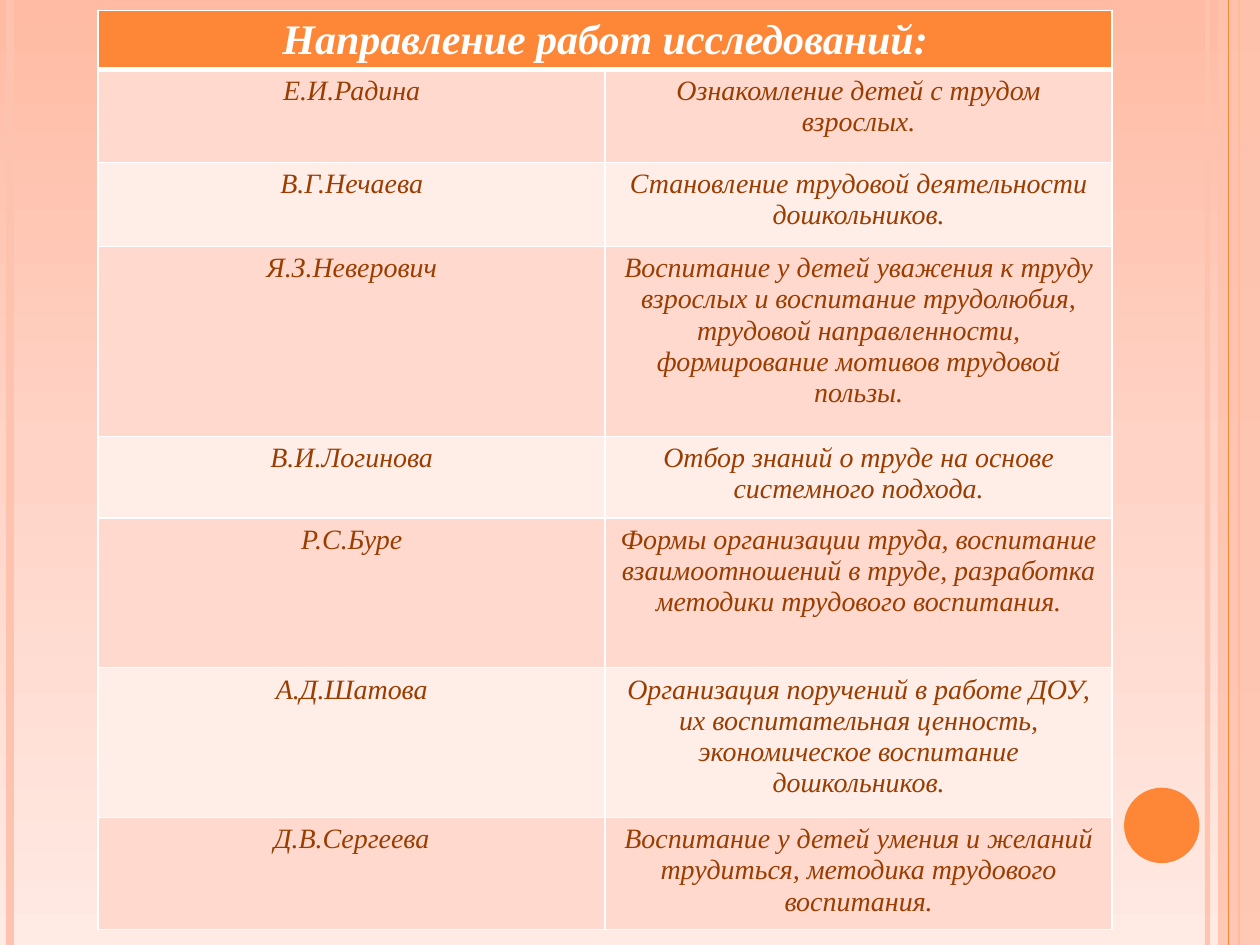
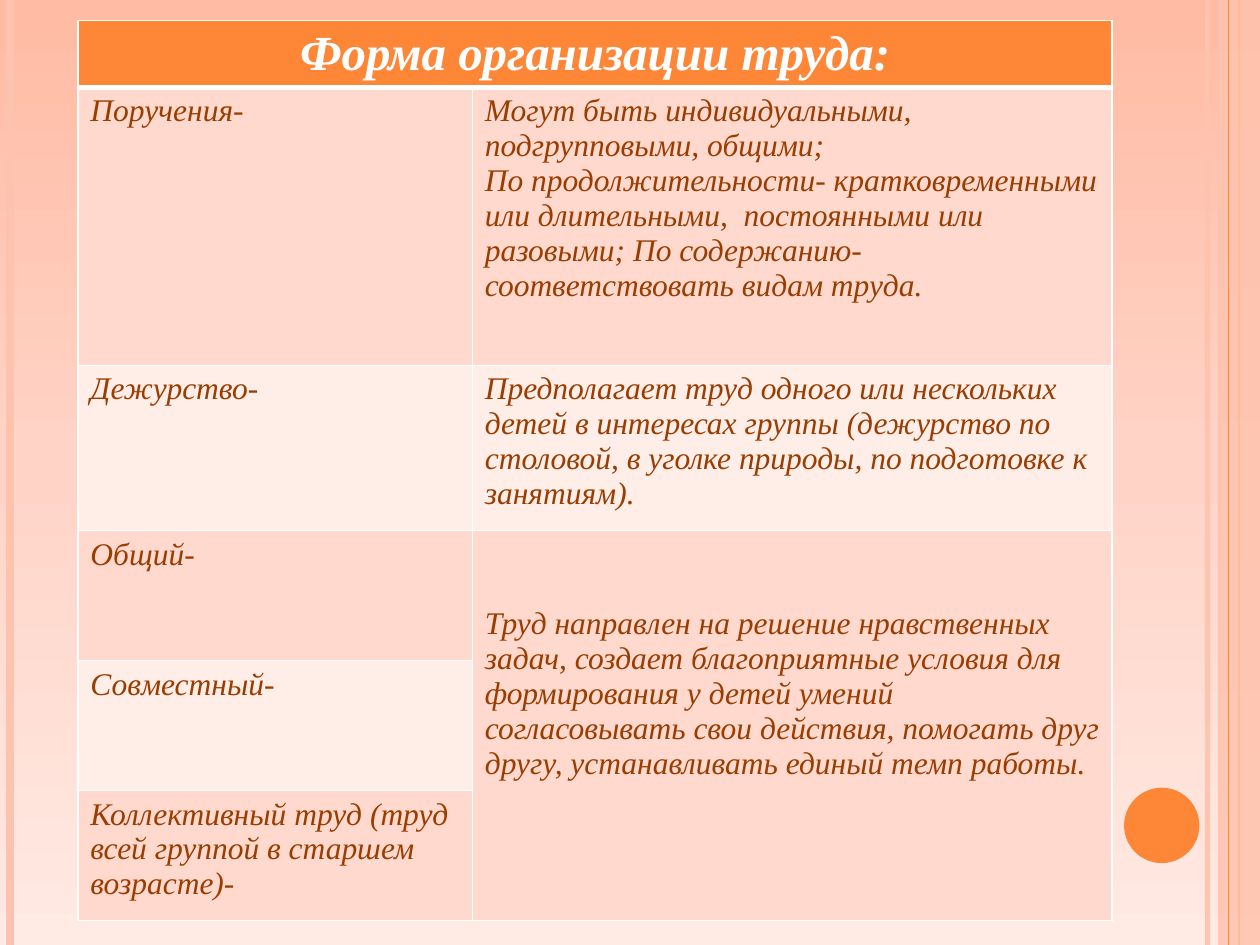
from pptx import Presentation
from pptx.dml.color import RGBColor
from pptx.enum.shapes import MSO_CONNECTOR, MSO_SHAPE
from pptx.enum.text import PP_ALIGN
from pptx.oxml.ns import qn
from pptx.util import Cm, Pt
from lxml import etree
from copy import deepcopy

LINE = MSO_CONNECTOR.STRAIGHT
RECT, OVAL = MSO_SHAPE.RECTANGLE, MSO_SHAPE.OVAL
LEFT, CENTER = PP_ALIGN.LEFT, PP_ALIGN.CENTER

COLORS = {
    "accent": "FE8637", "stripe": "FEC3AE", "text": "9A3D01", "white": "FFFFFF",
    "band": "FFD9CE", "pale": "FFEDE8",
    "sky_top": "FFBBA3", "sky_mid": "FFD4C7", "sky_low": "FFEAE4",
}
PAGE = (0, 0, 25.4, 19.05)
BASE_FONT = {"name": "Times New Roman", "italic": True}
HEAD_FONT = {**BASE_FONT, "bold": True}
BODY_FONT = {**BASE_FONT, "bold": False}

RESEARCH = [
    ("Е.И.Радина", "Ознакомление детей с трудом взрослых."),
    ("В.Г.Нечаева", "Становление трудовой деятельности дошкольников."),
    ("Я.З.Неверович", "Воспитание у детей уважения к труду взрослых и воспитание "
     "трудолюбия, трудовой направленности, формирование мотивов трудовой пользы."),
    ("В.И.Логинова", "Отбор знаний о труде на основе системного подхода."),
    ("Р.С.Буре", "Формы организации труда, воспитание взаимоотношений в труде, "
     "разработка методики трудового воспитания."),
    ("А.Д.Шатова", "Организация поручений в работе ДОУ, их воспитательная ценность, "
     "экономическое воспитание дошкольников."),
    ("Д.В.Сергеева", "Воспитание у детей умения и желаний трудиться, методика "
     "трудового воспитания."),
]
FORMS = [
    ("Поручения-", "Могут быть индивидуальными, подгрупповыми, общими;\n"
     "По продолжительности- кратковременными или длительными,  постоянными или "
     "разовыми; По содержанию- соответствовать видам труда."),
    ("Дежурство-", "Предполагает труд одного или нескольких детей в интересах группы "
     "(дежурство по столовой, в уголке природы, по подготовке к занятиям)."),
    ("Общий-", "Труд направлен на решение нравственных задач, создает благоприятные "
     "условия для формирования у детей умений согласовывать свои действия, помогать "
     "друг другу, устанавливать единый темп работы."),
    ("Совместный-", ""),
    ("Коллективный труд (труд всей группой в старшем возрасте)-", ""),
]


def rgb(name):
    """Return the named palette colour."""
    return RGBColor.from_string(COLORS[name])


def set_alpha(sp, percent):
    """Make the first colour of a shape or connector partly transparent."""
    clr = next(sp._element.spPr.iter(qn("a:srgbClr")))
    etree.SubElement(clr, qn("a:alpha"), val=str(percent * 1000))


def set_background(master):
    """Give the master a gradient running from top to bottom."""
    fill = master.background.fill
    fill.gradient()
    fill.gradient_angle = 270
    gs_lst = next(master.element.iter(qn("a:gsLst")))
    gs_lst.insert(1, deepcopy(gs_lst[0]))
    for stop, name, pos in zip(fill.gradient_stops, ("sky_top", "sky_mid", "sky_low"), (0, 0.5, 1)):
        stop.color.rgb = rgb(name)
        stop.position = pos


def add_rule(s, x, top, height, color, width):
    """Draw a vertical line."""
    sp = s.shapes.add_connector(LINE, Cm(x), Cm(top), Cm(x), Cm(top + height))
    sp.line.color.rgb = rgb(color)
    sp.line.width = Pt(width)
    etree.SubElement(sp._element.spPr, qn("a:effectLst"))
    return sp


def add_solid(s, kind, box, color):
    """Draw a filled shape without an outline."""
    sp = s.shapes.add_shape(kind, *map(Cm, box))
    sp.shadow.inherit = False
    sp.fill.solid()
    sp.fill.fore_color.rgb = rgb(color)
    sp.line.fill.background()
    return sp


def add_frame(s, box):
    """Draw the edge stripes and the disc inside the page box."""
    left, top, width, height = box
    right = left + width
    set_alpha(add_rule(s, right - 1.06, top, height, "stripe", 3), 93)
    add_rule(s, left + 0.21, top, height, "stripe", 4.5)
    add_rule(s, right - 0.42, top, height, "accent", 1.5)
    set_alpha(add_solid(s, RECT, (right - 0.85, top, 0.85, height), "stripe"), 87)
    add_rule(s, right - 0.64, top, height, "accent", 0.75)
    add_solid(s, OVAL, (right - 2.74, top + 15.88, 1.52, 1.52), "accent")


def set_borders(cell, top, bottom):
    """Give a cell white borders, with the top and bottom widths in points."""
    tc_pr = cell._tc.get_or_add_tcPr()
    for side, width in zip("LRTB", (1, 1, top, bottom)):
        ln = etree.SubElement(tc_pr, qn(f"a:ln{side}"), w=str(Pt(width)))
        fill = etree.SubElement(ln, qn("a:solidFill"))
        etree.SubElement(fill, qn("a:srgbClr"), val=COLORS["white"])


def fill_cell(cell, text, font, color, align):
    """Write formatted text into a cell."""
    cell.text = text
    for p in cell.text_frame.paragraphs:
        p.alignment = align
        for r in p.runs:
            for key, value in font.items():
                setattr(r.font, key, value)
            r.font.color.rgb = rgb(color)


def add_banded_table(s, box, heading, rows, cols, heights, sizes, align):
    """Build a two-column banded table under a merged heading row."""
    shape = s.shapes.add_table(len(rows) + 1, len(cols), *map(Cm, box))
    tbl = shape.table
    for col, width in zip(tbl.columns, cols):
        col.width = Cm(width)
    for row, height in zip(tbl.rows, heights):
        row.height = Cm(height)
    head_size, body_size = map(Pt, sizes)
    for i, texts in enumerate([(heading, "")] + rows):
        head = i == 0
        font = {**HEAD_FONT, "size": head_size} if head else {**BODY_FONT, "size": body_size}
        for j, text in enumerate(texts):
            cell = tbl.cell(i, j)
            set_borders(cell, 3 if i == 1 else 1, 3 if head else 1)
            cell.fill.solid()
            cell.fill.fore_color.rgb = rgb("accent" if head else "band" if i % 2 else "pale")
            if text:
                fill_cell(cell, text, font, "white" if head else "text",
                          CENTER if head else align)
    tbl.cell(0, 0).merge(tbl.cell(0, 1))
    return tbl


def add_research_slide(prs):
    """Add the slide on researchers and their subjects."""
    s = prs.slides.add_slide(prs.slide_layouts[6])
    add_frame(s, PAGE)
    add_banded_table(s, (1.98, 0.21, 20.44, 18.52), "Направление работ исследований:",
                     RESEARCH, (10.22, 10.22),
                     (1.17, 1.87, 1.7, 3.83, 1.64, 3.02, 3.02, 2.26), (24, 16), CENTER)


def add_forms_slide(prs):
    """Add the slide on forms of work, with one text shared by three rows."""
    s = prs.slides.add_slide(prs.slide_layouts[6])
    add_frame(s, PAGE)
    tbl = add_banded_table(s, (1.57, 0.41, 20.85, 18.15), "Форма организации труда:",
                           FORMS, (7.95, 12.9),
                           (1.34, 5.61, 3.33, 2.62, 2.62, 2.62), (28, 18), LEFT)
    shared = tbl.cell(3, 1)
    shared.merge(tbl.cell(5, 1))
    shared.margin_top = Cm(1.53)


def main():
    """Build and save the presentation."""
    prs = Presentation()
    prs.slide_width, prs.slide_height = map(Cm, PAGE[2:])
    set_background(prs.slide_master)
    add_research_slide(prs)
    add_forms_slide(prs)
    prs.save("out.pptx")


if __name__ == "__main__":
    main()
